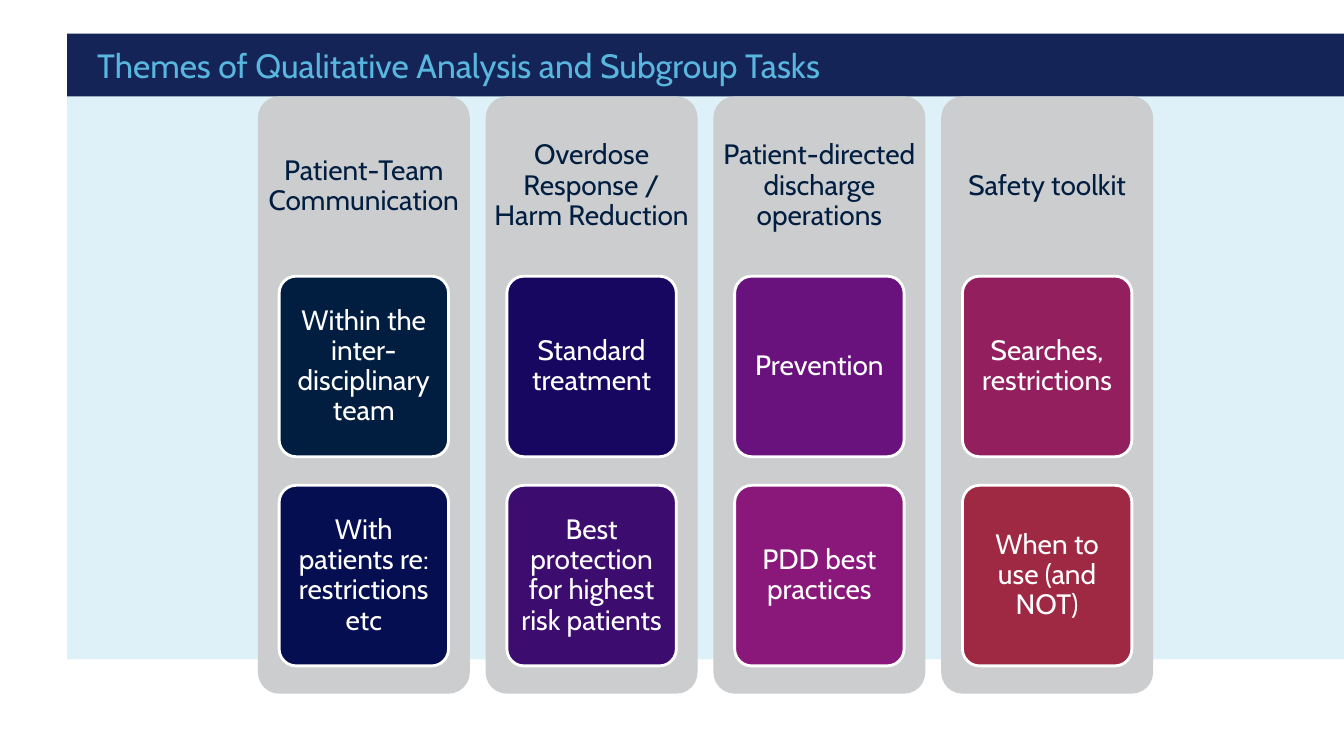
from pptx import Presentation, util as u
from pptx.dml.color import RGBColor
from pptx.enum import shapes, text

FONT = "Cabin"
COLORS = {
    "pale": "DEF1F9", "navy": "152456", "sky": "59B7DF",
    "gray": "CCCDCF", "ink": "011E40", "white": "FFFFFF",
}

# Heading, then (label, fill) for each card
THEMES = [
    ("Patient-Team Communication",
     [("Within the inter-disciplinary team", "011E40"),
      ("With patients re: restrictions etc", "040E51")]),
    ("Overdose Response / Harm Reduction",
     [("Standard treatment", "170760"),
      ("Best protection for highest risk patients", "3D0C6F")]),
    ("Patient-directed discharge operations",
     [("Prevention", "69117C"),
      ("PDD best practices", "89187A")]),
    ("Safety toolkit",
     [("Searches, restrictions", "941F5F"),
      ("When to use (and NOT)", "9F2843")]),
]

# Layout in centimetres
LEFT, TOP = 6.5, 2.43
COL_W, COL_H, COL_STEP = 5.34, 15.05, 5.74
HEAD_H = 4.52
CARD_W, CARD_H, CARD_TOP, CARD_STEP = 4.27, 4.55, 6.96, 5.27


def add_box(slide, box, fill, rounded=False, edge=None):
    kind = shapes.MSO_SHAPE.ROUNDED_RECTANGLE if rounded else shapes.MSO_SHAPE.RECTANGLE
    shape = slide.shapes.add_shape(kind, *map(u.Cm, box))
    shape.shadow.inherit = False
    shape.fill.solid()
    shape.fill.fore_color.rgb = RGBColor.from_string(fill)
    if rounded:
        shape.adjustments[0] = 0.1
    if edge:
        shape.line.color.rgb = RGBColor.from_string(edge)
        shape.line.width = u.Pt(2)
    else:
        shape.line.fill.background()
    return shape


def set_text(shape, words, color, size, pad, align, space=1.0):
    frame = shape.text_frame
    frame.word_wrap = True
    frame.vertical_anchor = text.MSO_ANCHOR.MIDDLE
    (frame.margin_left, frame.margin_top,
     frame.margin_right, frame.margin_bottom) = map(u.Cm, pad)
    para = frame.paragraphs[0]
    para.text = words
    para.alignment = align
    para.line_spacing = space
    para.font.name = FONT
    para.font.size = u.Pt(size)
    para.font.color.rgb = RGBColor.from_string(color)


def add_theme(slide, left, head, cards):
    center = text.PP_ALIGN.CENTER
    # Panel and heading
    add_box(slide, (left, TOP, COL_W, COL_H), COLORS["gray"], rounded=True)
    label = slide.shapes.add_textbox(*map(u.Cm, (left, TOP, COL_W, HEAD_H)))
    set_text(label, head, COLORS["ink"], 20, [0.2] * 4, center, 0.9)
    # Cards
    inset = (COL_W - CARD_W) / 2
    for row, (words, fill) in enumerate(cards):
        box = (left + inset, CARD_TOP + row * CARD_STEP, CARD_W, CARD_H)
        card = add_box(slide, box, fill, rounded=True, edge=COLORS["white"])
        set_text(card, words, COLORS["white"], 20, (0.15, 0.1, 0.15, 0.1), center, 0.9)


def main():
    deck = Presentation()
    deck.slide_width, deck.slide_height = u.Cm(33.87), u.Cm(19.05)
    slide = deck.slides.add_slide(deck.slide_layouts[6])

    # Backdrop and title bar
    add_box(slide, (1.69, 0.85, 32.18, 15.77), COLORS["pale"])
    title = add_box(slide, (1.69, 0.85, 32.18, 1.58), COLORS["navy"])
    set_text(title, "Themes of Qualitative Analysis and Subgroup Tasks",
             COLORS["sky"], 24, (0.76, 0.13, 0, 0.13), text.PP_ALIGN.LEFT)

    # Theme columns
    for col, (head, cards) in enumerate(THEMES):
        add_theme(slide, LEFT + col * COL_STEP, head, cards)

    deck.save("out.pptx")


if __name__ == "__main__":
    main()
